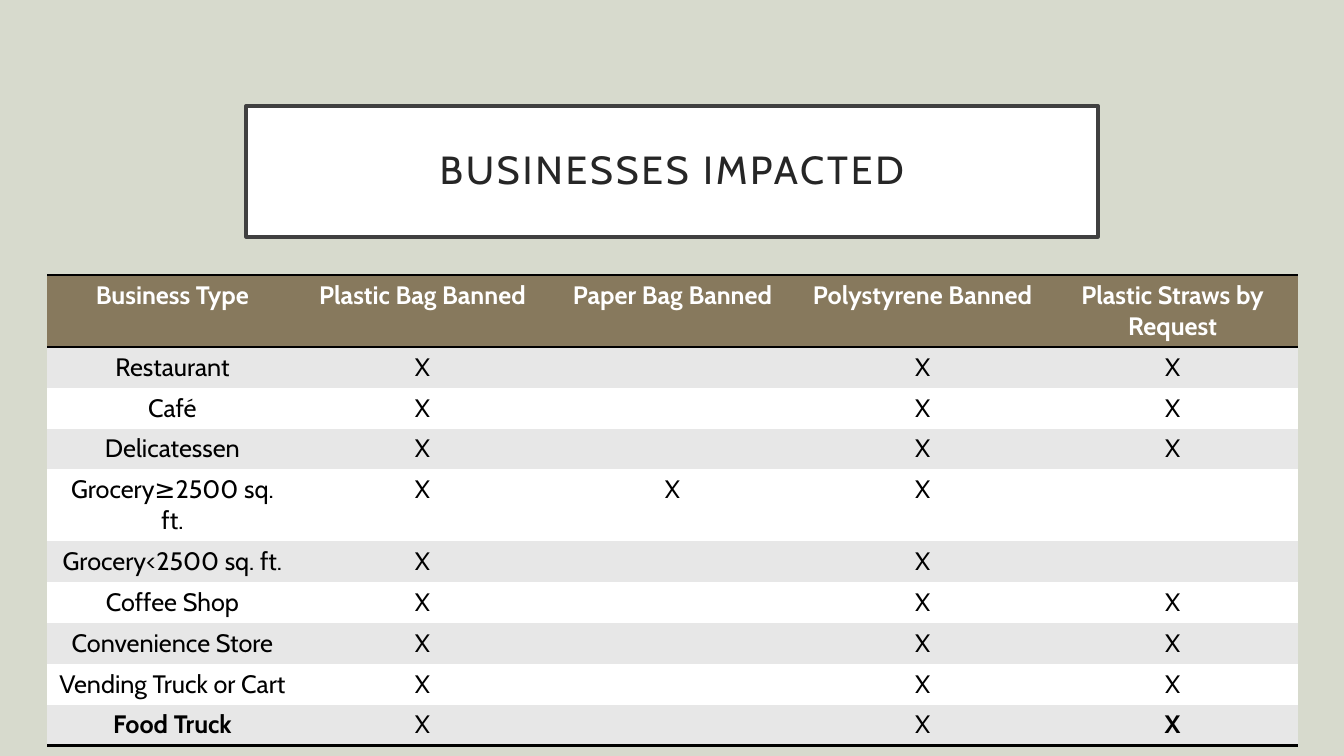
from dataclasses import dataclass

from lxml import etree
from pptx import Presentation
from pptx.dml.color import RGBColor
from pptx.enum.text import MSO_ANCHOR, PP_ALIGN
from pptx.oxml.ns import qn
from pptx.util import Inches, Pt

CENTER = PP_ALIGN.CENTER
MIDDLE = MSO_ANCHOR.MIDDLE
TITLE_ONLY = 5
FONT = "Cabin"
NO_STYLE = "{2D5ABB26-0587-4C30-8999-92F81FD0307C}"
COLORS = {
    "background": "D7DACD", "title": "262626", "frame": "404040",
    "header": "87795D", "band": "E7E7E7", "white": "FFFFFF", "black": "000000",
}

# Slide size and table grid, in inches
WIDTH, HEIGHT = 13.33, 7.5
TABLE_LEFT, TABLE_TOP = 0.47, 2.73
COL, ROW = 2.48, 0.4


@dataclass
class Business:
    name: str
    plastic: bool = True
    paper: bool = False
    polystyrene: bool = True
    straws: bool = True
    bold: bool = False

    def cells(self) -> list[tuple[str, bool]]:
        """Text and boldness of each cell in the row."""
        bans = (self.plastic, self.paper, self.polystyrene)
        return [(self.name, self.bold),
                *[("X" if ban else "", False) for ban in bans],
                ("X" if self.straws else "", self.bold)]


HEADERS = ["Business Type", "Plastic Bag Banned", "Paper Bag Banned",
           "Polystyrene Banned", "Plastic Straws by Request"]
BUSINESSES = [
    Business("Restaurant"),
    Business("Café"),
    Business("Delicatessen"),
    Business("Grocery≥2500 sq. ft.", paper=True, straws=False),
    Business("Grocery<2500 sq. ft.", straws=False),
    Business("Coffee Shop"),
    Business("Convenience Store"),
    Business("Vending Truck or Cart"),
    Business("Food Truck", bold=True),
]


def rgb(name: str) -> RGBColor:
    return RGBColor.from_string(COLORS[name])


def write(tf, text: str, *, size: float = 18, color: str = "black",
          bold: bool = False, spacing: float = 0) -> None:
    p = tf.paragraphs[0]
    p.alignment = CENTER
    if not text:
        return
    r = p.add_run()
    r.text = text
    r.font.name, r.font.size, r.font.bold = FONT, Pt(size), bold
    r.font.color.rgb = rgb(color)
    if spacing:
        r.font._element.set("spc", str(int(spacing * 100)))


def add_border(cell, side: str, width: float = 2) -> None:
    """Borders must precede the cell's fill, so call this first."""
    ln = etree.SubElement(cell._tc.get_or_add_tcPr(), qn(f"a:ln{side}"),
                          w=str(Pt(width)))
    fill = etree.SubElement(ln, qn("a:solidFill"))
    etree.SubElement(fill, qn("a:srgbClr"), val=COLORS["black"])


def add_title(s, text: str) -> None:
    sp = s.shapes.title
    sp.left, sp.top = Inches(2.44), Inches(0.14 * HEIGHT)
    sp.width, sp.height = Inches(8.45), Inches(1.3)
    sp.fill.solid()
    sp.fill.fore_color.rgb = rgb("white")
    sp.line.color.rgb = rgb("frame")
    sp.line.width = Pt(2.5)
    tf = sp.text_frame
    tf.word_wrap = True
    tf.vertical_anchor = MIDDLE
    tf.margin_left = tf.margin_right = Inches(0.2)
    tf.margin_top = tf.margin_bottom = Inches(0.2)
    write(tf, text, size=28, color="title", spacing=2)
    tf.paragraphs[0].line_spacing = 0.9


def add_business_table(s) -> None:
    rows = [[(text, True) for text in HEADERS],
            *[business.cells() for business in BUSINESSES]]
    table = s.shapes.add_table(
        len(rows), len(HEADERS), Inches(TABLE_LEFT), Inches(TABLE_TOP),
        Inches(COL * len(HEADERS)), Inches(ROW * len(rows))).table
    table._tbl.tblPr.find(qn("a:tableStyleId")).text = NO_STYLE
    for i, row in enumerate(rows):
        header, last = i == 0, i == len(rows) - 1
        fill = "header" if header else "band" if i % 2 else "white"
        for j, (text, bold) in enumerate(row):
            cell = table.cell(i, j)
            if header:
                add_border(cell, "T")
            if header or last:
                add_border(cell, "B")
            cell.fill.solid()
            cell.fill.fore_color.rgb = rgb(fill)
            write(cell.text_frame, text, bold=bold,
                  color="white" if header else "black")


def main() -> None:
    prs = Presentation()
    prs.slide_width, prs.slide_height = Inches(WIDTH), Inches(HEIGHT)
    s = prs.slides.add_slide(prs.slide_layouts[TITLE_ONLY])
    s.background.fill.solid()
    s.background.fill.fore_color.rgb = rgb("background")
    add_title(s, "BUSINESSES IMPACTED")
    add_business_table(s)
    prs.save("out.pptx")


if __name__ == "__main__":
    main()
